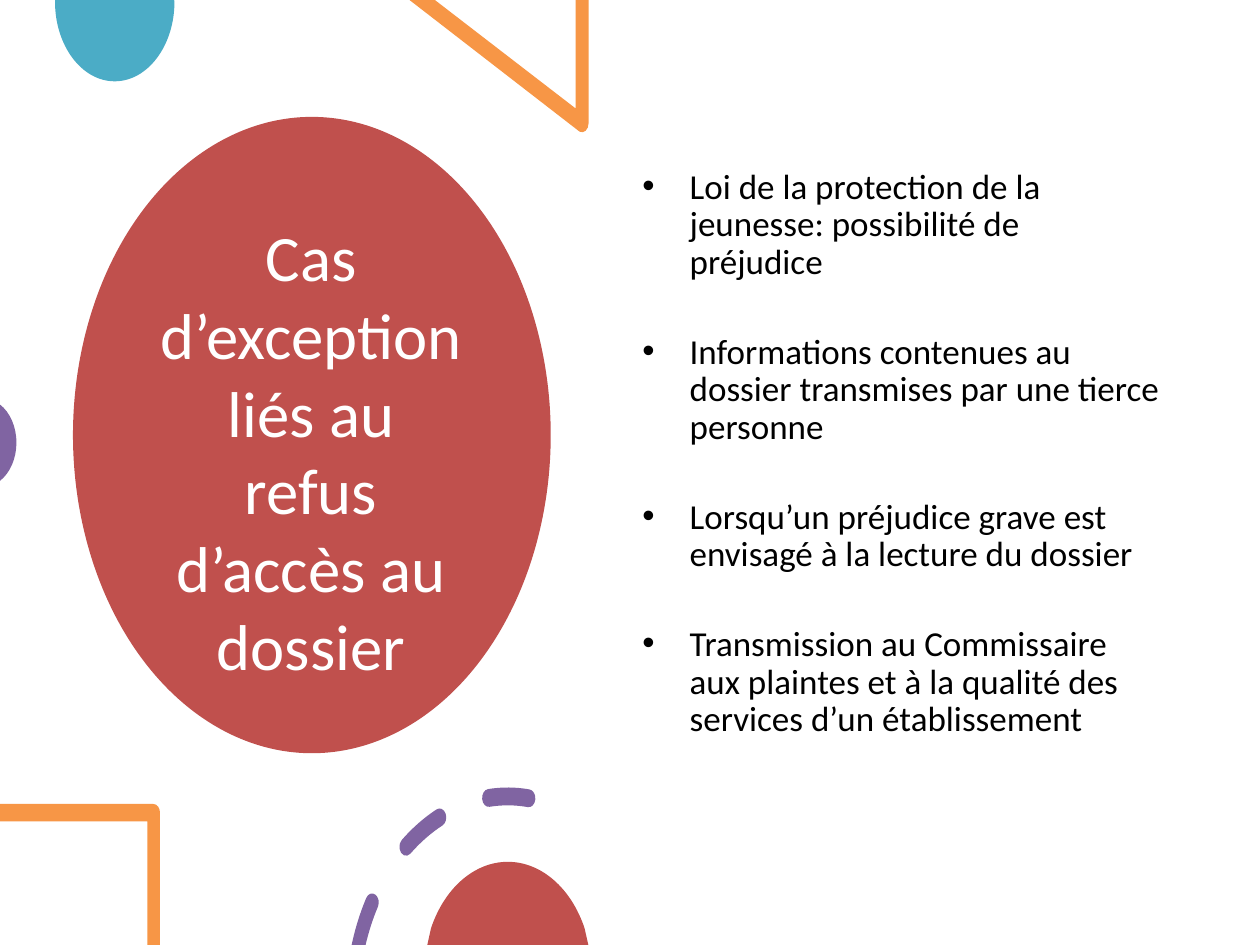
from dataclasses import dataclass
from math import ceil, cos, radians, sin, tan

from lxml import etree
from pptx import Presentation
from pptx.dml.color import RGBColor
from pptx.enum.shapes import MSO_SHAPE
from pptx.enum.text import MSO_ANCHOR, PP_ALIGN
from pptx.oxml.ns import qn
from pptx.util import Pt

ELLIPSE = MSO_SHAPE.OVAL
MIDDLE, TOP = MSO_ANCHOR.MIDDLE, MSO_ANCHOR.TOP
CENTER, LEFT = PP_ALIGN.CENTER, PP_ALIGN.LEFT

RED, TEAL, ORANGE, PURPLE = "C0504D", "4BACC6", "F79646", "8064A2"
WHITE, BLACK = "FFFFFF", "000000"
FONT = "Calibri"
WIDTH, HEIGHT = 720, 540
ASPECT = 0.75  # width of the decorative curves relative to their height

TITLE = "Cas d’exception liés au refus d’accès au dossier"
CASES = [
    "Loi de la protection de la jeunesse: possibilité de préjudice",
    "Informations contenues au dossier transmises par une tierce personne",
    "Lorsqu’un préjudice grave est envisagé à la lecture du dossier",
    "Transmission au Commissaire aux plaintes et à la qualité des "
    "services d’un établissement",
]

Point = tuple[float, float]
Contour = list[list[Point]]  # a segment has one point (line) or three (curve)


@dataclass
class Decoration:
    color: str
    contours: list[Contour]


def set_fill(shape, color: str) -> None:
    shape.fill.solid()
    shape.fill.fore_color.rgb = RGBColor.from_string(color)
    shape.line.fill.background()
    shape.shadow.inherit = False


def lines(*points: Point) -> Contour:
    return [[point] for point in points]


def arc(center: Point, radius: float, start: float, end: float) -> Contour:
    """Line to the start, then curves; degrees clockwise from the right."""
    count = ceil(abs(end - start) / 90)
    step = radians(end - start) / count
    pull = 4 / 3 * tan(step / 4)

    def place(angle: float, along: float = 0) -> Point:
        return (center[0] + ASPECT * radius * (cos(angle) - along * sin(angle)),
                center[1] + radius * (sin(angle) + along * cos(angle)))

    angles = [radians(start) + step * i for i in range(count + 1)]
    return [[place(angles[0])]] + [
        [place(a, pull), place(b, -pull), place(b)] for a, b in zip(angles, angles[1:])]


def dash(start: float, end: float, cut_inner: float = 0) -> Contour:
    """One dash of the ring with round ends; cut_inner ends it at the slide edge."""
    center, middle, half = (290.2, 573.7), 118.6, 5.1

    def cap(angle: float, turn: float) -> Contour:
        cap_center = (center[0] + ASPECT * middle * cos(radians(angle)),
                      center[1] + middle * sin(radians(angle)))
        return arc(cap_center, half, turn, turn + 180)[1:]

    outer = arc(center, middle + half, start, end)
    inner = arc(center, middle - half, end, cut_inner or start)[1:]
    start_cap = [] if cut_inner else cap(start, start + 180)
    return outer + cap(end, end) + inner + start_cap


def bend_segments(shape, contours: list[Contour]) -> None:
    """Turn the three lines of each curved segment into one Bézier curve."""
    steps = iter(list(shape.element.iter(qn("a:lnTo"))))
    for contour in contours:
        for segment in contour[1:]:
            first, *others = [next(steps) for _ in segment]
            if others:
                first.tag = qn("a:cubicBezTo")
            for step in others:
                first.append(step[0])
                step.getparent().remove(step)


def add_decoration(slide, decoration: Decoration) -> None:
    builder = None
    for contour in decoration.contours:
        start, *points = [(Pt(x), Pt(y)) for segment in contour for x, y in segment]
        if builder is None:
            builder = slide.shapes.build_freeform(*start)
        else:
            builder.move_to(*start)
        builder.add_line_segments(points)
    shape = builder.convert_to_shape()
    bend_segments(shape, decoration.contours)
    set_fill(shape, decoration.color)


def format_paragraph(paragraph, size: float, color: str, alignment) -> None:
    paragraph.alignment = alignment
    paragraph.font.name = FONT
    paragraph.font.size = Pt(size)
    paragraph.font.color.rgb = RGBColor.from_string(color)


def add_bullet(paragraph, indent: float) -> None:
    properties = paragraph._p.get_or_add_pPr()
    properties.set("marL", str(Pt(indent)))
    properties.set("indent", str(-Pt(indent)))
    etree.SubElement(properties, qn("a:buFont")).set("typeface", "Arial")
    etree.SubElement(properties, qn("a:buChar")).set("char", "•")
    # The default run properties come after the bullet in the schema
    for defaults in properties.findall(qn("a:defRPr")):
        properties.append(defaults)


def add_title(slide) -> None:
    circle = slide.shapes.add_shape(ELLIPSE, Pt(41.7), Pt(66.8), Pt(273), Pt(363.6))
    set_fill(circle, RED)
    title = slide.shapes.title
    title.left, title.top, title.width, title.height = Pt(82), Pt(97), Pt(191.5), Pt(320.5)
    title.element.getparent().append(title.element)  # in front of the ellipse
    frame = title.text_frame
    frame.text = TITLE
    frame.word_wrap = True
    frame.vertical_anchor = MIDDLE
    frame.margin_left = frame.margin_right = Pt(8)
    format_paragraph(frame.paragraphs[0], 37, WHITE, CENTER)


def add_cases(slide) -> None:
    box = slide.shapes.add_textbox(Pt(360), Pt(65), Pt(310.3), Pt(385))
    frame = box.text_frame
    frame.word_wrap = True
    frame.vertical_anchor = TOP
    frame.margin_top, frame.margin_right = Pt(31.5), Pt(7.4)
    for index, case in enumerate(CASES):
        paragraph = frame.add_paragraph() if index else frame.paragraphs[0]
        paragraph.text = case
        paragraph.line_spacing = 0.9
        paragraph.space_before = Pt(29.5 if index else 0)
        format_paragraph(paragraph, 20, BLACK, LEFT)
        add_bullet(paragraph, 27)


DECORATIONS = [
    # Top: ellipse and triangle
    Decoration(TEAL, [arc((65.6, 1), 45.5, 180, 0) + lines((99.5, 0), (31.5, 0))]),
    Decoration(ORANGE, [lines((336.4, 0), (329, 0), (329, 62), (248.5, 0), (234, 0))
                        + arc((332.6, 70.6), 5, 110, 0)]),
    # Left edge: ellipse
    Decoration(PURPLE, [arc((-9.5, 253), 25.2, -60, 60)]),
    # Bottom: square, dashed ring and ellipse
    Decoration(ORANGE, [lines((0, 459.4)) + arc((87.7, 464.4), 5, -90, 0)
                        + lines((91.4, HEIGHT), (84.2, HEIGHT), (84.2, 469.4),
                                (0, 469.4))]),
    Decoration(PURPLE, [dash(195.8, 209.3, cut_inner=197.3), dash(229.2, 244),
                        dash(263, 277.7)]),
    Decoration(RED, [arc((290.2, 556.5), 64, 204, 336)
                     + lines((336.2, HEIGHT), (244.2, HEIGHT))]),
]


def main() -> None:
    presentation = Presentation()
    presentation.slide_width, presentation.slide_height = Pt(WIDTH), Pt(HEIGHT)
    slide = presentation.slides.add_slide(presentation.slide_layouts[5])
    add_title(slide)
    for decoration in DECORATIONS:
        add_decoration(slide, decoration)
    add_cases(slide)
    presentation.save("out.pptx")


if __name__ == "__main__":
    main()
